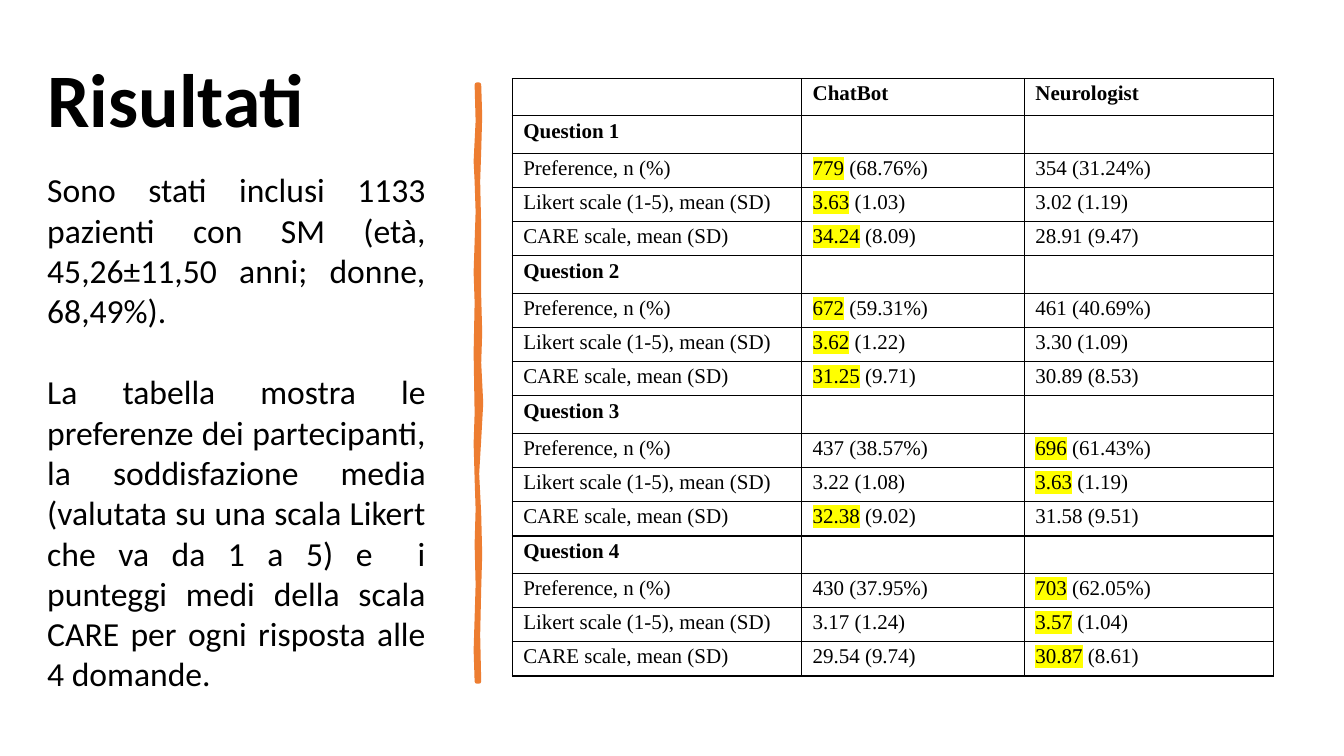
from pptx import Presentation
from pptx.dml.color import RGBColor
from pptx.enum.text import MSO_ANCHOR, MSO_AUTO_SIZE, PP_ALIGN
from pptx.oxml import parse_xml
from pptx.oxml.ns import nsdecls, qn
from pptx.util import Inches, Pt

BLACK = RGBColor(0x00, 0x00, 0x00)
WHITE = RGBColor(0xFF, 0xFF, 0xFF)
ORANGE = RGBColor(0xED, 0x7D, 0x31)
YELLOW = RGBColor(0xFF, 0xFF, 0x00)

BODY_TEXTS = [
    "Sono stati inclusi 1133 pazienti con SM (età, 45,26±11,50 anni; donne, 68,49%).",
    "La tabella mostra le preferenze dei partecipanti, la soddisfazione media "
    "(valutata su una scala Likert che va da 1 a 5) e  i punteggi medi della scala "
    "CARE per ogni risposta alle 4 domande.",
]

# Results: one list per question, one (chatbot, neurologist) pair per measure
MEASURES = ["Preference, n (%)", "Likert scale (1-5), mean (SD)", "CARE scale, mean (SD)"]
QUESTIONS = [
    [("779 (68.76%)", "354 (31.24%)"), ("3.63 (1.03)", "3.02 (1.19)"), ("34.24 (8.09)", "28.91 (9.47)")],
    [("672 (59.31%)", "461 (40.69%)"), ("3.62 (1.22)", "3.30 (1.09)"), ("31.25 (9.71)", "30.89 (8.53)")],
    [("437 (38.57%)", "696 (61.43%)"), ("3.22 (1.08)", "3.63 (1.19)"), ("32.38 (9.02)", "31.58 (9.51)")],
    [("430 (37.95%)", "703 (62.05%)"), ("3.17 (1.24)", "3.57 (1.04)"), ("29.54 (9.74)", "30.87 (8.61)")],
]
COLUMN_WIDTHS = [2.87, 2.21, 2.47]
HEADING_HEIGHT, MEASURE_HEIGHT = 0.37, 0.34

# Hand-drawn divider: right edge downwards, then left edge upwards
RIGHT_EDGE = [(4.75, 0.84), (4.76, 1.15), (4.75, 1.5), (4.74, 1.8), (4.75, 2.26),
              (4.75, 2.94), (4.76, 3.3), (4.75, 3.6), (4.77, 4.0), (4.75, 4.36),
              (4.73, 4.7), (4.75, 5.1), (4.76, 5.5), (4.75, 5.84), (4.74, 6.3), (4.75, 6.76)]
LEFT_EDGE = [(4.73, 6.76), (4.72, 6.45), (4.73, 6.13), (4.74, 5.8), (4.73, 5.4),
             (4.74, 5.05), (4.73, 4.75), (4.72, 4.4), (4.73, 4.1), (4.72, 3.5),
             (4.73, 3.0), (4.72, 2.7), (4.73, 2.4), (4.74, 2.1), (4.73, 1.8),
             (4.72, 1.6), (4.74, 1.2), (4.73, 0.84)]


def write(para, text, *, font, size, bold=False, color=BLACK, highlight=None):
    """Add a formatted span to a paragraph."""
    span = para.add_run()
    span.text = text
    span.font.name = font
    span.font.size = Pt(size)
    span.font.bold = bold
    span.font.color.rgb = color
    if highlight is not None:
        mark = parse_xml(f'<a:highlight {nsdecls("a")}><a:srgbClr val="{highlight}"/></a:highlight>')
        span.font._element.find(qn("a:solidFill")).addnext(mark)


def leading_number(value):
    return float(value.split()[0])


class ResultsSlide:
    heading_font = "Calibri"
    table_font = "Times New Roman"
    table_size = 15

    def __init__(self, deck):
        self.slide = deck.slides.add_slide(deck.slide_layouts[5])
        self.slide.background.fill.solid()
        self.slide.background.fill.fore_color.rgb = WHITE

    def title(self, text, left, top, width, height):
        box = self.slide.shapes.title
        box.left, box.top, box.width, box.height = map(Inches, (left, top, width, height))
        frame = box.text_frame
        frame.vertical_anchor = MSO_ANCHOR.MIDDLE
        frame.auto_size = MSO_AUTO_SIZE.NONE
        para = frame.paragraphs[0]
        para.alignment = PP_ALIGN.LEFT
        para.line_spacing = 0.9
        write(para, text, font=self.heading_font, size=54, bold=True)

    def body(self, texts, left, top, width, height):
        box = self.slide.shapes.add_textbox(*map(Inches, (left, top, width, height)))
        frame = box.text_frame
        frame.word_wrap = True
        for index, text in enumerate(texts):
            para = frame.add_paragraph() if index else frame.paragraphs[0]
            para.alignment = PP_ALIGN.JUSTIFY
            para.space_before = Pt(29 if index else 0)
            write(para, text, font=self.heading_font, size=24)

    def divider(self, outline):
        points = [(Inches(x), Inches(y)) for x, y in outline]
        builder = self.slide.shapes.build_freeform(*points[0])
        builder.add_line_segments(points[1:], close=True)
        bar = builder.convert_to_shape()
        bar.shadow.inherit = False
        bar.fill.solid()
        bar.fill.fore_color.rgb = ORANGE
        bar.line.color.rgb = ORANGE
        bar.line.width = Pt(3.25)

    def cell(self, cell, text, bold=False, marked=False):
        cell.margin_left = cell.margin_right = Inches(0.11)
        cell.margin_top, cell.margin_bottom = Inches(0.02), 0
        properties = cell._tc.get_or_add_tcPr()
        for side in ("lnL", "lnR", "lnT", "lnB"):
            properties.append(parse_xml(
                f'<a:{side} {nsdecls("a")} w="{Pt(1)}"><a:solidFill>'
                f'<a:srgbClr val="{BLACK}"/></a:solidFill></a:{side}>'))
        cell.fill.background()
        if not text:
            return
        para = cell.text_frame.paragraphs[0]
        para.alignment = PP_ALIGN.JUSTIFY
        para.line_spacing = 1.07
        para.space_after = Pt(8)
        style = {"font": self.table_font, "size": self.table_size, "bold": bold}
        if marked:
            number, rest = text.split(" ", 1)
            write(para, number, highlight=YELLOW, **style)
            text = " " + rest
        write(para, text, **style)

    def table(self, rows, left, top):
        heights = [MEASURE_HEIGHT if row[0] in MEASURES else HEADING_HEIGHT for row in rows]
        frame = self.slide.shapes.add_table(
            len(rows), len(COLUMN_WIDTHS), Inches(left), Inches(top),
            Inches(sum(COLUMN_WIDTHS)), Inches(sum(heights)))
        table = frame.table
        table.first_row = table.horz_banding = False
        for column, width in zip(table.columns, COLUMN_WIDTHS):
            column.width = Inches(width)
        for row_index, (row, height) in enumerate(zip(rows, heights)):
            table.rows[row_index].height = Inches(height)
            is_measure = row[0] in MEASURES
            # The higher value of each pair is marked
            best = max(row[1:], key=leading_number) if is_measure else None
            for column_index, text in enumerate(row):
                self.cell(table.cell(row_index, column_index), text,
                          bold=not is_measure, marked=is_measure and text == best)


def main():
    deck = Presentation()
    deck.slide_width, deck.slide_height = Inches(13.33), Inches(7.5)
    page = ResultsSlide(deck)

    # Title and divider
    page.title("Risultati", 0.37, 0.38, 3.74, 1.28)
    page.divider(RIGHT_EDGE + LEFT_EDGE)

    # Results table
    rows = [("", "ChatBot", "Neurologist")]
    for number, pairs in enumerate(QUESTIONS, start=1):
        rows.append((f"Question {number}", "", ""))
        rows += [(measure, *pair) for measure, pair in zip(MEASURES, pairs)]
    page.table(rows, 5.08, 0.78)

    # Explanation
    page.body(BODY_TEXTS, 0.37, 1.63, 3.95, 5.35)
    deck.save("out.pptx")


if __name__ == "__main__":
    main()
